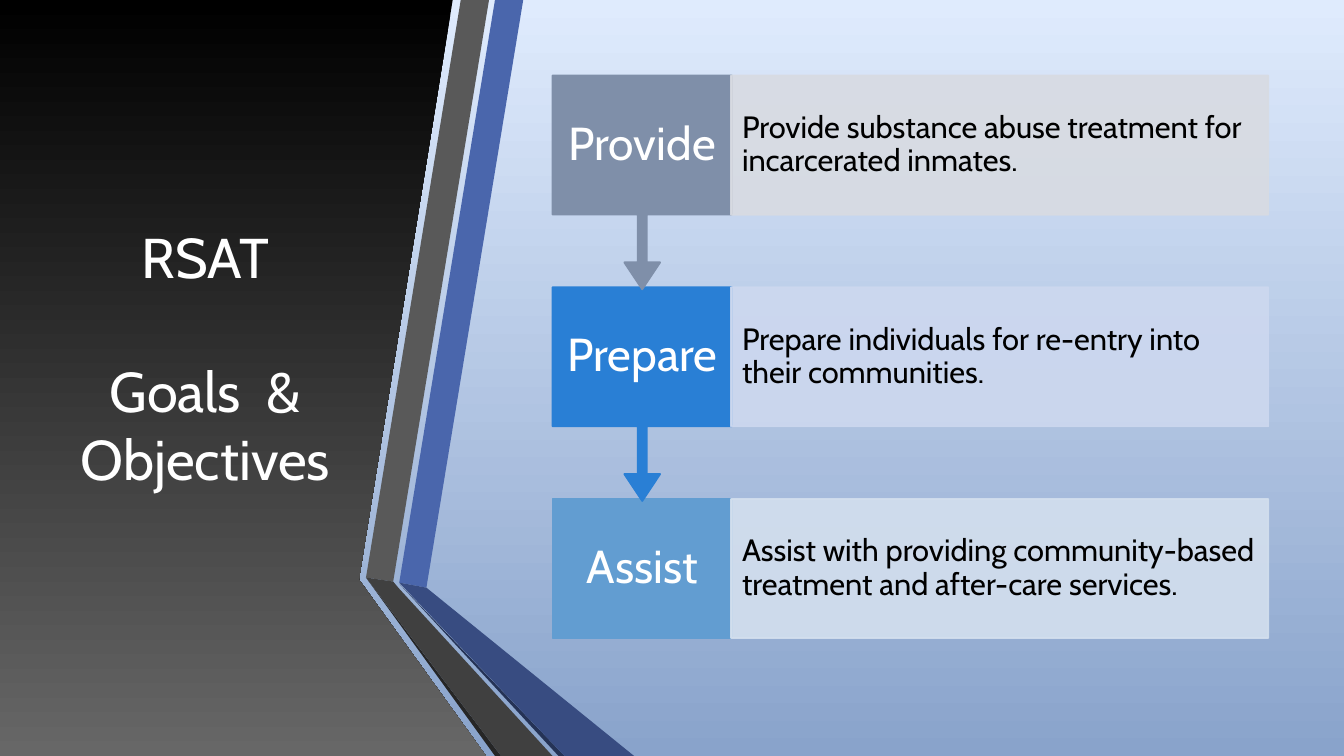
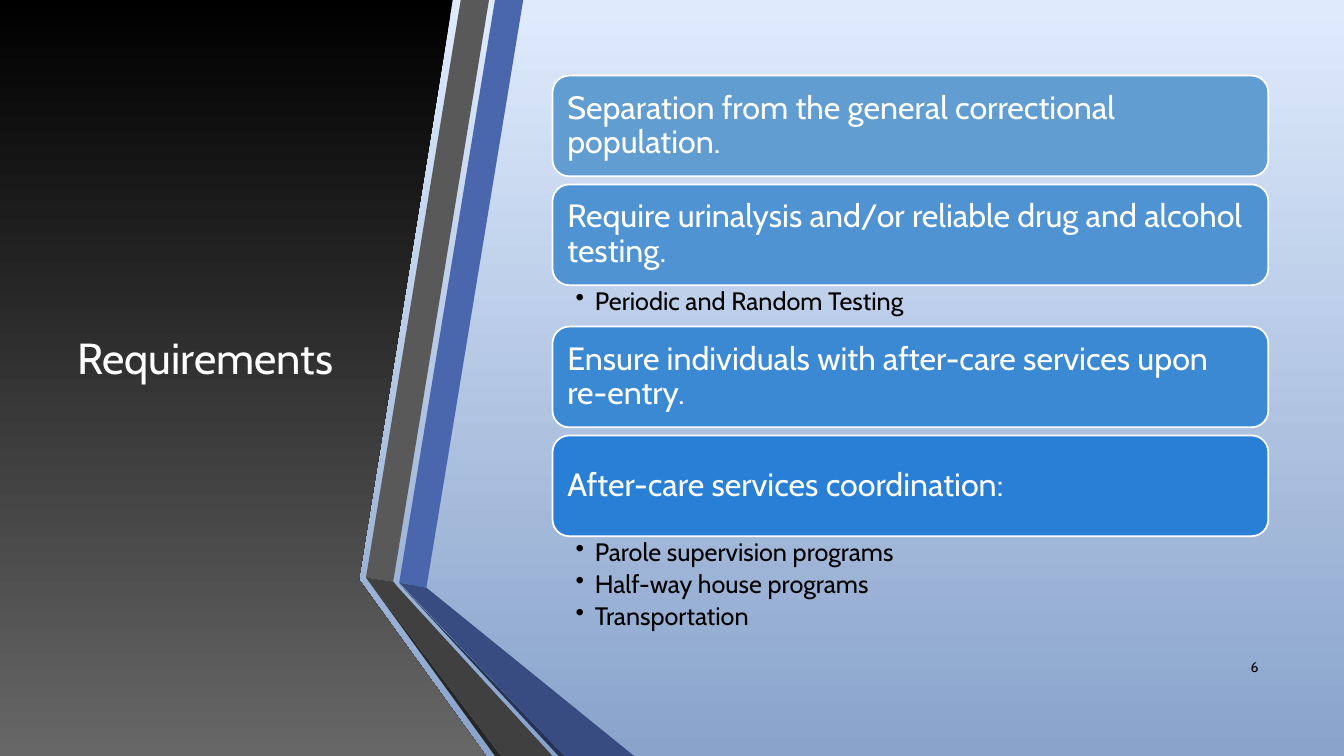
from lxml.etree import SubElement
from pptx import Presentation
from pptx.dml.color import RGBColor
from pptx.enum.shapes import MSO_SHAPE
from pptx.enum.text import MSO_ANCHOR, PP_ALIGN
from pptx.oxml.ns import qn
from pptx.util import Inches, Pt

COLORS = {
    "sky_top": "DFEBFD", "sky_bottom": "89A3CB",
    "white": "FFFFFF", "black": "000000", "panel_gray": "676767",
    "ribbon_blue": "4A66AC", "ribbon_blue_low": "384C81", "ribbon_blue_edge": "253356",
    "ribbon_gray": "595959", "ribbon_gray_low": "404040", "ribbon_gray_edge": "262626",
    "slate": "7F8FA9", "slate_pale": "D8DBE2",
    "blue": "297FD5", "blue_pale": "CDD8EF",
    "light": "629DD1", "light_pale": "D3DFEE",
    "light_mid": "5093D2", "blue_mid": "3C89D3",
}
FONT = "Cabin"

TITLE_PANEL = [(0, 0), (4.49, 0), (3.56, 5.75), (4.82, 7.5), (0, 7.5)]
RIBBONS = [
    ("ribbon_blue", [(3.96, 5.78), (4.23, 5.83), (5.19, 0), (4.91, 0)]),
    ("ribbon_gray", [(4.85, 0), (4.57, 0), (3.63, 5.73), (3.9, 5.77)]),
    ("ribbon_gray_edge", [(3.63, 5.73), (4.91, 7.5), (4.97, 7.5)]),
    ("ribbon_blue_edge", [(3.96, 5.79), (5.54, 7.5), (5.6, 7.5)]),
    ("ribbon_blue_low", [(3.96, 5.78), (5.6, 7.5), (6.29, 7.5), (4.23, 5.83)]),
    ("ribbon_gray_low", [(5.48, 7.5), (3.95, 5.83), (3.9, 5.77), (3.63, 5.73), (4.97, 7.5)]),
]
GOALS = [
    ("Provide", "Provide substance abuse treatment for incarcerated inmates.", "slate"),
    ("Prepare", "Prepare individuals for re-entry into their communities.", "blue"),
    ("Assist", "Assist with providing community-based treatment and after-care services.", "light"),
]
REQUIREMENTS = [
    ("Separation from the general correctional population.", "light", []),
    ("Require urinalysis and/or reliable drug and alcohol testing.", "light_mid",
     ["Periodic and Random Testing"]),
    ("Ensure individuals with after-care services upon re-entry.", "blue_mid", []),
    ("After-care services coordination:", "blue",
     ["Parole supervision programs", "Half-way house programs", "Transportation"]),
]

CONTENT_LEFT, CONTENT_TOP, CONTENT_WIDTH = 5.48, 0.75, 7.1

TITLE = {"alignment": PP_ALIGN.CENTER, "space_after": Pt(48)}
LABEL = {"alignment": PP_ALIGN.CENTER, "line_spacing": 0.9}
BODY = {"alignment": PP_ALIGN.LEFT, "line_spacing": 0.9}
BULLET = {**BODY, "space_after": Pt(3.6)}
NUMBER = {"alignment": PP_ALIGN.RIGHT}


def rgb(name):
    return RGBColor.from_string(COLORS[name])


def apply_format(target, values):
    for name, value in values.items():
        setattr(target, name, value)


def set_gradient(fill, top, bottom):
    fill.gradient()
    fill.gradient_angle = 270
    for stop, name in zip(fill.gradient_stops, (top, bottom)):
        stop.color.rgb = rgb(name)


def paint(shape, fill, line=None, opacity=None):
    shape.shadow.inherit = False
    shape.fill.solid()
    shape.fill.fore_color.rgb = rgb(fill)
    if line:
        shape.line.color.rgb = rgb(line)
        shape.line.width = Pt(1.25)
    else:
        shape.line.fill.background()
    if opacity:
        for color in shape._element.spPr.iter(qn("a:srgbClr")):
            SubElement(color, qn("a:alpha"), val=str(opacity * 1000))


def write(box, lines, size, color, style, insets=(0.1, 0.05, 0.1, 0.05),
          anchor=MSO_ANCHOR.MIDDLE):
    frame = box.text_frame
    sides = ("margin_left", "margin_top", "margin_right", "margin_bottom")
    apply_format(frame, {"word_wrap": True, "vertical_anchor": anchor,
                         **dict(zip(sides, map(Inches, insets)))})
    for index, line in enumerate(lines):
        para = frame.add_paragraph() if index else frame.paragraphs[0]
        apply_format(para, style)
        span = para.add_run()
        span.text = line
        apply_format(span.font, {"name": FONT, "size": Pt(size)})
        span.font.color.rgb = rgb(color)
    return frame


def add_bullets(frame):
    for para in frame.paragraphs:
        properties = para._p.get_or_add_pPr()
        apply_indent = {"marL": Inches(0.19), "indent": Inches(-0.19)}
        for name, value in apply_indent.items():
            properties.set(name, str(value))
        SubElement(properties, qn("a:buChar"), char="•")


def add_text(page, at, *text, **options):
    box = page.shapes.add_textbox(*map(Inches, at))
    return write(box, *text, **options)


def add_block(page, kind, at, *colors):
    block = page.shapes.add_shape(kind, *map(Inches, at))
    paint(block, *colors)
    return block


def add_outline(page, points, color):
    corners = [(Inches(x), Inches(y)) for x, y in points]
    builder = page.shapes.build_freeform(*corners[0])
    builder.add_line_segments(corners[1:])
    outline = builder.convert_to_shape()
    paint(outline, color)
    return outline


def add_page(deck, title, title_size):
    page = deck.slides.add_slide(deck.slide_layouts[6])
    set_gradient(page.background.fill, "sky_top", "sky_bottom")
    panel = add_outline(page, TITLE_PANEL, "black")
    set_gradient(panel.fill, "black", "panel_gray")
    add_text(page, (0.59, 0.75, 2.89, 5.58), title, title_size, "white", TITLE)
    for color, points in RIBBONS:
        add_outline(page, points, color)
    return page


def add_goals(page):
    height, step, label_width = 1.38, 2.1, 1.78
    last = len(GOALS) - 1
    for index, (label, detail, color) in reversed(list(enumerate(GOALS))):
        top = CONTENT_TOP + index * step
        has_arrow = index < last
        kind = MSO_SHAPE.DOWN_ARROW_CALLOUT if has_arrow else MSO_SHAPE.RECTANGLE
        label_height = 2.12 if has_arrow else height
        block = add_block(page, kind, (CONTENT_LEFT, top, label_width, label_height),
                          color, color)
        if has_arrow:
            for position, value in enumerate((0.05, 0.1, 0.15, 0.65)):
                block.adjustments[position] = value
        write(block, [label], 33, "white", LABEL, insets=(0.13, 0.26, 0.13, 0.26))
        pale = color + "_pale"
        panel = add_block(page, MSO_SHAPE.RECTANGLE, (7.25, top, 5.33, height),
                          pale, pale, 90)
        write(panel, [detail], 22, "black", BODY, insets=(0.11, 0.31, 0.11, 0.31))


def add_requirements(page):
    height, gap, line_height = 1, 0.08, 0.32
    top = CONTENT_TOP
    for text, color, details in REQUIREMENTS:
        block = add_block(page, MSO_SHAPE.ROUNDED_RECTANGLE,
                          (CONTENT_LEFT, top, CONTENT_WIDTH, height), color, "white")
        write(block, [text], 23, "white", BODY, insets=(0.1,) * 4)
        top += height
        if details:
            room = line_height * len(details) + 0.09
            frame = add_text(page, (CONTENT_LEFT, top, CONTENT_WIDTH, room),
                             details, 18, "black", BULLET,
                             insets=(0.23, 0.03, 0.18, 0.03), anchor=MSO_ANCHOR.TOP)
            add_bullets(frame)
            top += room
        else:
            top += gap


def main():
    deck = Presentation()
    apply_format(deck, {"slide_width": Inches(13.33), "slide_height": Inches(7.5)})
    add_goals(add_page(deck, ["RSAT", "Goals  & Objectives"], 40))
    page = add_page(deck, ["Requirements"], 31)
    add_text(page, (11.98, 6.42, 0.6, 0.4), ["6"], 10, "black", NUMBER)
    add_requirements(page)
    deck.save("out.pptx")


if __name__ == "__main__":
    main()
